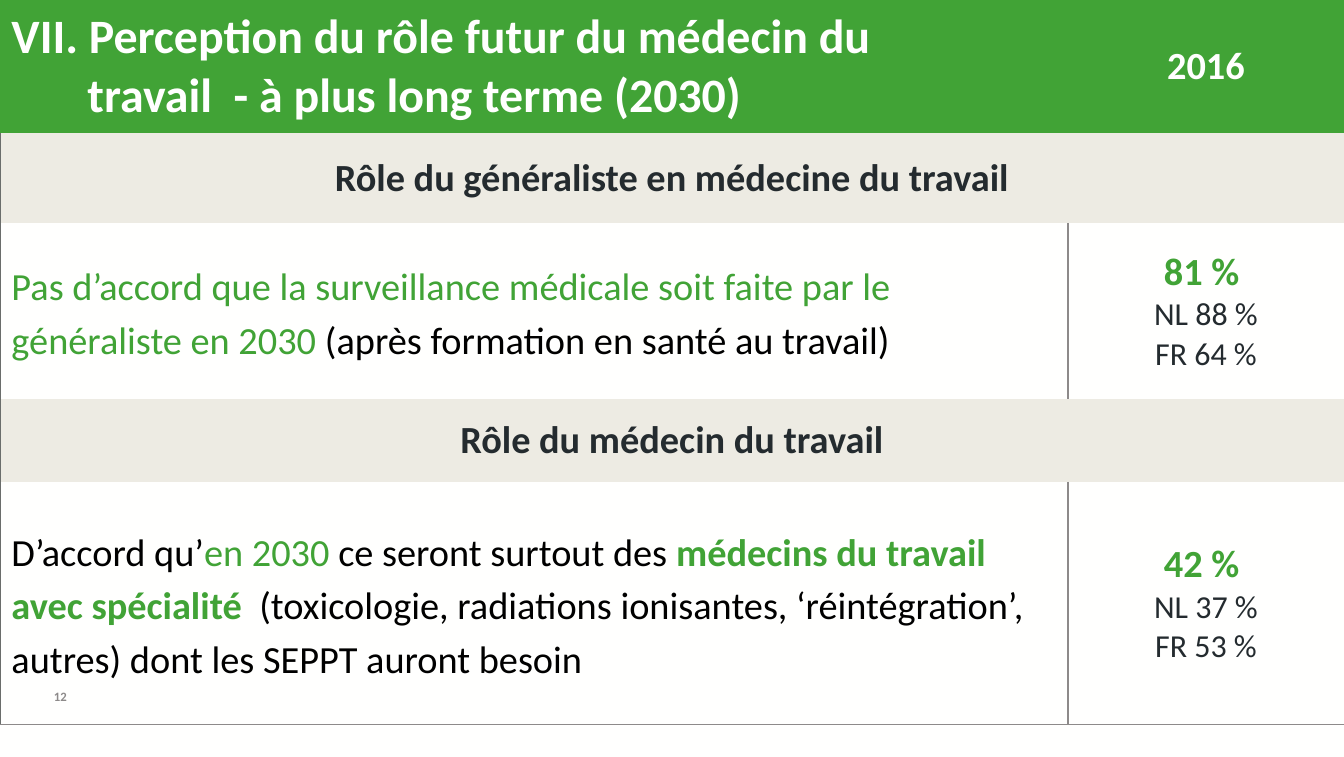
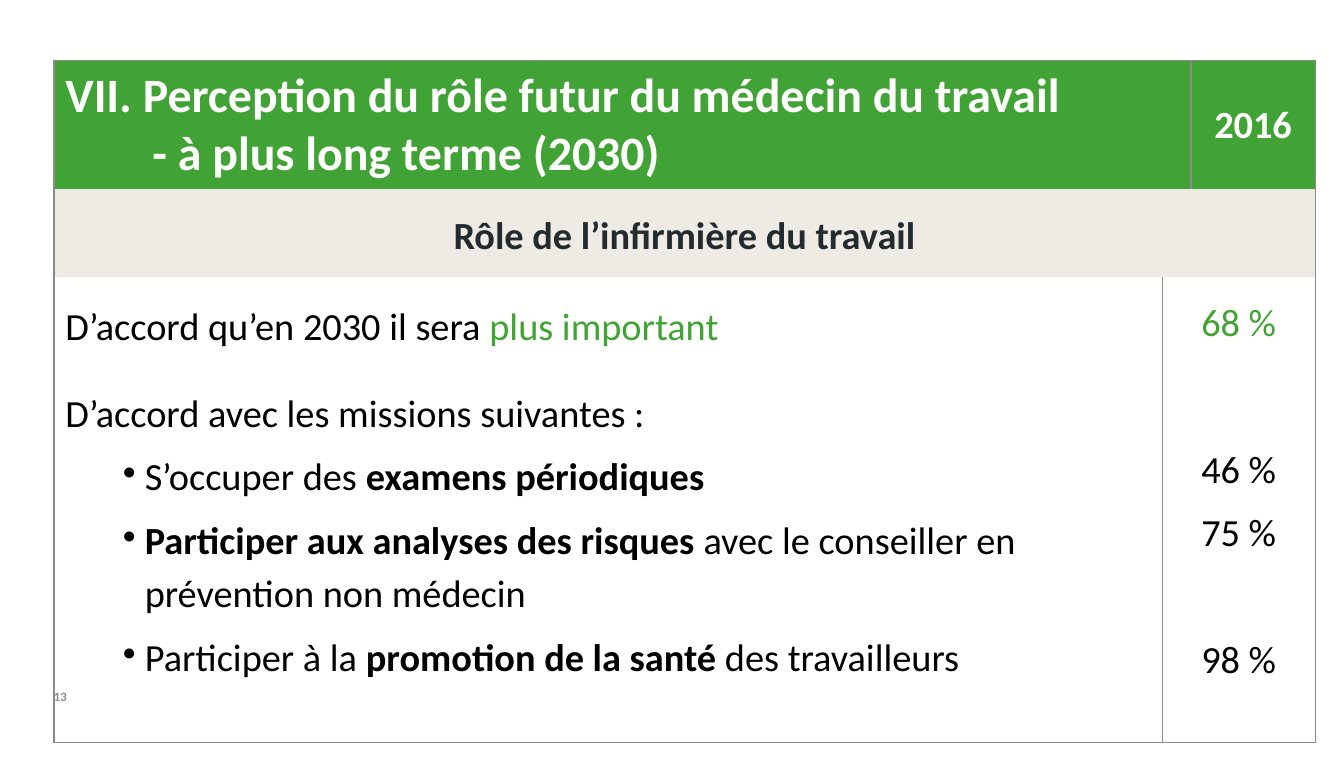
from dataclasses import dataclass

from lxml import etree
from pptx import Presentation
from pptx.dml.color import RGBColor
from pptx.enum.text import MSO_ANCHOR as ANCHOR, PP_ALIGN as ALIGN
from pptx.oxml.ns import qn
from pptx.util import Pt

FONT = "Calibri"
GREEN, BAND, WHITE = "41A336", "EDEBE3", "FFFFFE"
BLACK, DARK, GREY, EDGE = "000000", "242B2F", "8D8A8A", "6A6D6B"
PAD_X, PAD_Y = 7.2, 3.6


def rgb(value):
    return RGBColor.from_string(value)


@dataclass
class Para:
    runs: list                # (text, colour, bold)
    size: float = 24
    align: object = ALIGN.LEFT
    spaced: bool = False      # loose lines with a gap after
    bullet: bool = False
    indent: float = 0
    before: float = 0


@dataclass
class Block:
    """Text that fills the columns first to last of one row."""
    first: int
    last: int
    paras: list
    anchor: object = ANCHOR.MIDDLE
    top: float = PAD_Y


def centred(text, color=BLACK, bold=False, **options):
    return Para([(text, color, bold)], align=ALIGN.CENTER, **options)


# ---- text ----
def write_para(p, para):
    pPr = p._p.get_or_add_pPr()
    if para.bullet:
        pPr.set("marL", str(Pt(49.7)))
        pPr.set("indent", str(Pt(-13.7)))
        etree.SubElement(pPr, qn("a:buChar")).set("char", "•")
    elif para.indent:
        pPr.set("marL", str(Pt(para.indent)))
    p.alignment = para.align
    if para.spaced:
        p.line_spacing = 1.15
        p.space_after = Pt(6)
    if para.before:
        p.space_before = Pt(para.before)
    for text, color, bold in para.runs:
        r = p.add_run()
        r.text = text
        r.font.name, r.font.size, r.font.bold = FONT, Pt(para.size), bold
        r.font.color.rgb = rgb(color)


def write_paras(tf, paras):
    for i, para in enumerate(paras):
        write_para(tf.add_paragraph() if i else tf.paragraphs[0], para)


# ---- table ----
def set_borders(cell, lines):
    """lines maps L, R, T, B to (colour, width); other sides get no line."""
    tcPr = cell._tc.get_or_add_tcPr()
    for side in "LRTB":
        ln = etree.SubElement(tcPr, qn("a:ln" + side))
        if lines.get(side):
            color, width = lines[side]
            ln.set("w", str(Pt(width)))
            solid = etree.SubElement(ln, qn("a:solidFill"))
            etree.SubElement(solid, qn("a:srgbClr")).set("val", color)
        else:
            etree.SubElement(ln, qn("a:noFill"))


def fill_row(table, row, blocks, edge, divider=None, top=None, bottom=None, fill=None):
    end = len(table.columns) - 1
    for b in blocks:
        lines = {"L": divider if b.first else edge,
                 "R": edge if b.last == end else divider,
                 "T": top, "B": bottom}
        for col in range(b.first, b.last + 1):
            cell = table.cell(row, col)
            set_borders(cell, lines)
            if fill:
                cell.fill.solid()
                cell.fill.fore_color.rgb = rgb(fill)
            else:
                cell.fill.background()
        cell = table.cell(row, b.first)
        if b.last > b.first:
            cell.merge(table.cell(row, b.last))
        cell.vertical_anchor = b.anchor
        cell.margin_left = cell.margin_right = Pt(PAD_X)
        cell.margin_top, cell.margin_bottom = Pt(b.top), Pt(PAD_Y)
        write_paras(cell.text_frame, b.paras)


def add_grid(s, left, top, widths, heights):
    table = s.shapes.add_table(len(heights), len(widths), Pt(left), Pt(top),
                               Pt(sum(widths)), Pt(sum(heights))).table
    table.first_row = table.horz_banding = False
    for col, width in zip(table.columns, widths):
        col.width = Pt(width)
    for row, height in zip(table.rows, heights):
        row.height = Pt(height)
    return table


def header_row(table, first_line, second_line, indent, edge, bottom=None):
    end = len(table.columns) - 1
    title = [Para([(first_line, WHITE, True)], size=30),
             Para([(second_line, WHITE, True)], size=30, indent=indent)]
    fill_row(table, 0, [Block(0, end - 1, title),
                        Block(end, end, [centred("2016", WHITE, True)])],
             edge, divider=edge, top=edge, bottom=bottom, fill=GREEN)


def band_row(table, row, text, edge, spaced=False):
    fill_row(table, row, [Block(0, len(table.columns) - 1,
                                [centred(text, DARK, True, spaced=spaced)])],
             edge, fill=BAND)


# ---- slides ----
def new_slide(prs, number):
    s = prs.slides.add_slide(prs.slide_layouts[6])
    tf = s.shapes.add_textbox(Pt(33.8), Pt(431.3), Pt(12.2), Pt(15.8)).text_frame
    tf.margin_left = tf.margin_right = tf.margin_top = tf.margin_bottom = 0
    write_paras(tf, [Para([(number, GREY, True)], size=8)])
    return s


def scores(total, dutch, french):
    return [centred(total, GREEN, True), centred(dutch, DARK, size=20),
            centred(french, DARK, size=20)]


def doctor_slide(prs):
    s = new_slide(prs, "12")
    table = add_grid(s, 0, 0, [668.9, 172.8], [83.5, 56.2, 110.2, 51.8, 151.9])
    edge, divider, green = (EDGE, 0.5), (GREY, 1), (GREEN, 0.5)
    header_row(table, "VII. Perception du rôle futur du médecin du",
               "travail  - à plus long terme (2030)", 47.6, green, bottom=green)
    band_row(table, 1, "Rôle du généraliste en médecine du travail", edge)
    opinion = Para([
        ("Pas d’accord que la surveillance médicale soit faite par le "
         "généraliste en 2030 ", GREEN, False),
        ("(après formation en santé au travail)", BLACK, False)], spaced=True)
    fill_row(table, 2, [Block(0, 0, [opinion]),
                        Block(1, 1, scores("81 % ", "NL 88 %", "FR 64 %"))],
             edge, divider)
    band_row(table, 3, "Rôle du médecin du travail", edge)
    opinion = Para([
        ("D’accord qu’", BLACK, False),
        ("en 2030 ", GREEN, False),
        ("ce seront surtout des ", BLACK, False),
        ("médecins du travail avec spécialité  ", GREEN, True),
        ("(toxicologie, radiations ionisantes, ‘réintégration’, autres) "
         "dont les SEPPT auront besoin", BLACK, False)], spaced=True)
    fill_row(table, 4, [Block(0, 0, [opinion]),
                        Block(1, 1, scores("42 % ", "NL 37 %", "FR 53 %"))],
             edge, divider, bottom=divider)


def nurse_slide(prs):
    s = new_slide(prs, "13")
    table = add_grid(s, 33.8, 38, [694.1, 18, 77.8], [80.6, 54.7, 59, 232.6])
    edge = (GREY, 1)
    header_row(table, "VII. Perception du rôle futur du médecin du travail",
               "- à plus long terme (2030)", 54.5, edge)
    band_row(table, 1, "Rôle de l’infirmière du travail", edge, spaced=True)
    opinion = Para([("D’accord qu’en 2030 il sera ", BLACK, False),
                    ("plus important", GREEN, False)],
                   align=ALIGN.JUSTIFY, spaced=True)
    fill_row(table, 2, [Block(0, 0, [opinion]),
                        Block(1, 2, [centred("68 %", GREEN)])], edge, edge)
    # missions and their scores, line by line
    missions = [
        [("S’occuper des ", BLACK, False), ("examens périodiques", BLACK, True)],
        [("Participer aux analyses des risques ", BLACK, True),
         ("avec le conseiller en prévention non médecin", BLACK, False)],
        [("Participer à la ", BLACK, False),
         ("promotion de la santé ", BLACK, True),
         ("des travailleurs", BLACK, False)],
    ]
    intro = Para([("D’accord avec les missions suivantes\u00a0:", BLACK, False)],
                 spaced=True)
    listing = [intro] + [Para(m, spaced=True, bullet=True) for m in missions]
    shares = [centred(text, spaced=True, before=gap)
              for text, gap in [("46 %", 0), ("75 %", 0), ("98 %", 39.7)]]
    fill_row(table, 3, [Block(0, 0, listing, ANCHOR.TOP, 8.1),
                        Block(1, 2, shares, ANCHOR.TOP, 43.3)],
             edge, edge, bottom=edge)


def main():
    prs = Presentation()
    prs.slide_width, prs.slide_height = Pt(841.7), Pt(473.8)
    background = prs.slide_master.background.fill
    background.solid()
    background.fore_color.rgb = rgb(WHITE)
    doctor_slide(prs)
    nurse_slide(prs)
    prs.save("out.pptx")


if __name__ == "__main__":
    main()
